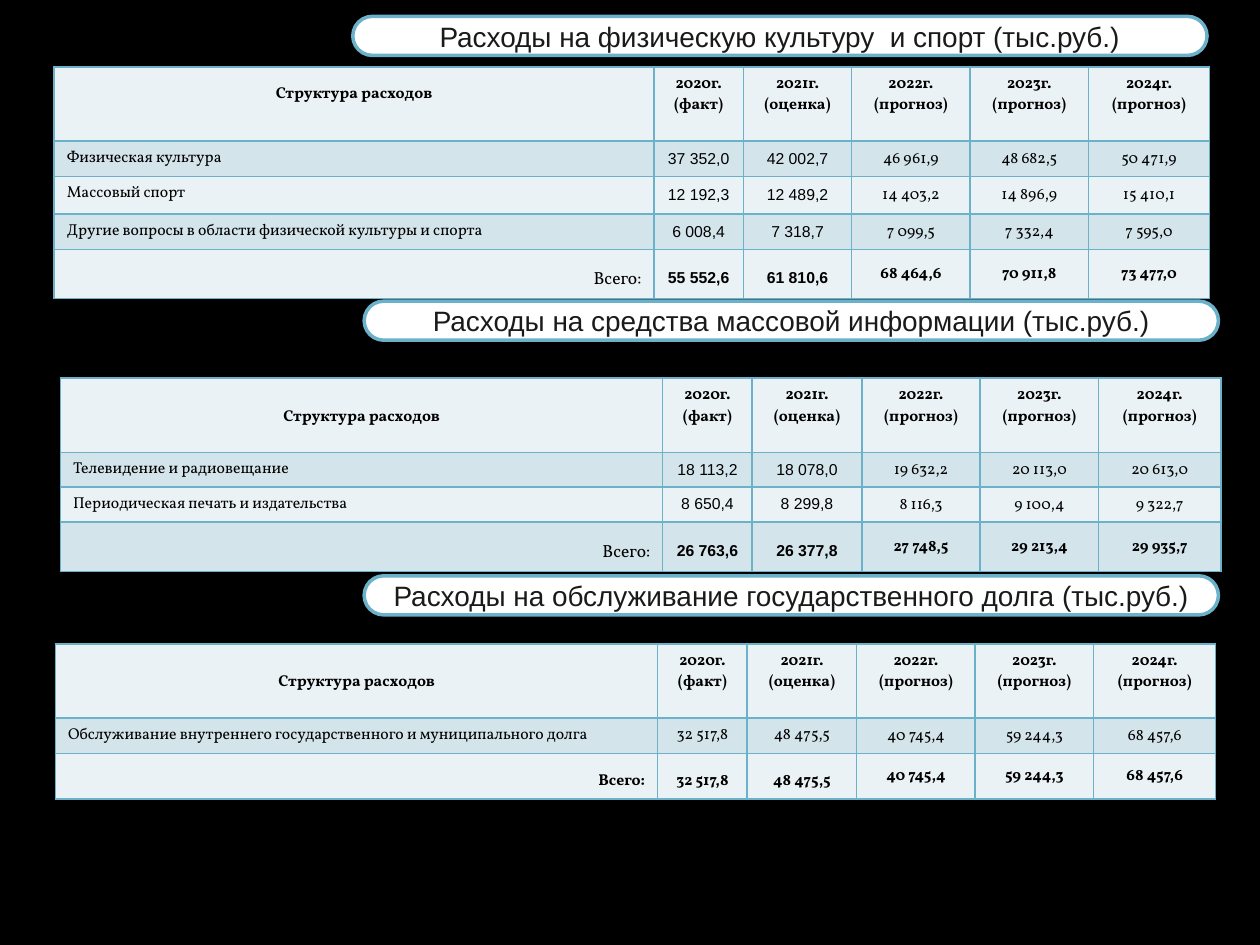
from lxml import etree
from pptx import Presentation
from pptx.dml.color import RGBColor
from pptx.enum.shapes import MSO_SHAPE as Shape
from pptx.enum.text import MSO_ANCHOR as Anchor, PP_ALIGN as Align
from pptx.oxml.ns import qn
from pptx.util import Inches, Pt

BORDER, LIGHT, DARK = "6BB1C9", "EBF2F5", "D4E4EB"
SERIF, SANS = "Vollkorn", "Arial"
HEADER = ["Структура расходов", "2020г. (факт)", "2021г. (оценка)",
          "2022г. (прогноз)", "2023г. (прогноз)", "2024г. (прогноз)"]
FIRST_FORECAST = 3  # column index
TOTAL = "Всего:"
WIDE_COLUMNS = [4.78, 0.71, 0.87, 0.94, 0.94, 0.97]

SECTIONS = [
    {
        "title": "Расходы на физическую культуру  и спорт (тыс.руб.)",
        "title_at": (2.8, 0.13),
        "table_at": (0.43, 0.53),
        "columns": [4.76, 0.71, 0.86, 0.94, 0.94, 0.96],
        "heights": [0.59, 0.28, 0.3, 0.28, 0.39],
        "header_spacing": 1.5,
        "actual_font": SANS,
        "strong_total": False,
        "rows": [
            ["Физическая культура", "37 352,0", "42 002,7", "46 961,9", "48 682,5", "50 471,9"],
            ["Массовый спорт", "12 192,3", "12 489,2", "14 403,2", "14 896,9", "15 410,1"],
            ["Другие вопросы в области физической культуры и спорта",
             "6 008,4", "7 318,7", "7 099,5", "7 332,4", "7 595,0"],
            [TOTAL, "55 552,6", "61 810,6", "68 464,6", "70 911,8", "73 477,0"],
        ],
    },
    {
        "title": "Расходы на средства массовой информации (тыс.руб.)",
        "title_at": (2.89, 2.39),
        "table_at": (0.48, 3),
        "columns": WIDE_COLUMNS,
        "heights": [0.59, 0.27, 0.28, 0.39],
        "header_spacing": 2,
        "actual_font": SANS,
        "strong_total": False,
        "rows": [
            ["Телевидение и радиовещание",
             "18 113,2", "18 078,0", "19 632,2", "20 113,0", "20 613,0"],
            ["Периодическая печать и издательства",
             "8 650,4", "8 299,8", "8 116,3", "9 100,4", "9 322,7"],
            [TOTAL, "26 763,6", "26 377,8", "27 748,5", "29 213,4", "29 935,7"],
        ],
    },
    {
        "title": "Расходы на обслуживание государственного долга (тыс.руб.)",
        "title_at": (2.89, 4.57),
        "table_at": (0.44, 5.11),
        "columns": WIDE_COLUMNS,
        "heights": [0.59, 0.28, 0.36],
        "header_spacing": 2,
        "actual_font": SERIF,
        "strong_total": True,
        "rows": [
            ["Обслуживание внутреннего государственного и муниципального долга",
             "32 517,8", "48 475,5", "40 745,4", "59 244,3", "68 457,6"],
            [TOTAL, "32 517,8", "48 475,5", "40 745,4", "59 244,3", "68 457,6"],
        ],
    },
]


def paint(color_owner, color):
    """Make a fill solid, or colour a font or line."""
    if hasattr(color_owner, "solid"):
        color_owner.solid()
        color_owner.fore_color.rgb = RGBColor.from_string(color)
    else:
        color_owner.color.rgb = RGBColor.from_string(color)


def write(paragraph, text, align, font_name, size, color="000000", bold=False, spacing=None):
    paragraph.text = text
    paragraph.alignment = align
    paragraph.line_spacing = spacing
    font = paragraph.font
    font.name, font.size, font.bold = font_name, Pt(size), bold
    paint(font, color)


def add_borders(cell):
    properties = cell._tc.get_or_add_tcPr()
    for index, side in enumerate(("lnL", "lnR", "lnT", "lnB")):
        line = etree.Element(qn(f"a:{side}"), w=str(Pt(1)))
        fill = etree.SubElement(line, qn("a:solidFill"))
        etree.SubElement(fill, qn("a:srgbClr"), val=BORDER)
        properties.insert(index, line)


def add_title(slide, section):
    left, top = section["title_at"]
    pill = slide.shapes.add_shape(Shape.ROUNDED_RECTANGLE, Inches(left), Inches(top),
                                  Inches(6.78), Inches(0.31))
    pill.adjustments[0] = 0.5
    pill.shadow.inherit = False
    paint(pill.fill, "FFFFFF")
    paint(pill.line, BORDER)
    pill.line.width = Pt(2)
    frame = pill.text_frame
    frame.word_wrap = True
    frame.vertical_anchor = Anchor.MIDDLE
    frame.margin_top = frame.margin_bottom = 0
    write(frame.paragraphs[0], section["title"], Align.CENTER, SANS, 16, "1A1A1B")


def fill_cell(cell, text, row, column, section):
    header = row == 0
    total = row == len(section["rows"])
    label = column == 0
    forecast = column >= FIRST_FORECAST
    strong = section["strong_total"]

    align, font_name, size, spacing = Align.CENTER, SERIF, 9, None
    bold = header or (total and (strong or not label))
    if label:
        if header:
            spacing = section["header_spacing"]
        elif total:
            align = Align.RIGHT
            size = 9 if strong else 10
        else:
            align = Align.LEFT
    elif not header and not forecast:
        font_name = section["actual_font"]
    if total and not forecast:
        spacing = 1.5

    if not header and (not label or (total and strong)):
        cell.vertical_anchor = Anchor.MIDDLE
    if forecast and not header:
        cell.margin_left = cell.margin_right = cell.margin_top = Inches(0.01)
        cell.margin_bottom = 0
    write(cell.text_frame.paragraphs[0], text, align, font_name, size,
          bold=bold, spacing=spacing)
    paint(cell.fill, DARK if row % 2 else LIGHT)
    add_borders(cell)


def add_expense_table(slide, section):
    rows = [HEADER] + section["rows"]
    left, top = section["table_at"]
    columns, heights = section["columns"], section["heights"]
    table = slide.shapes.add_table(len(rows), len(columns), Inches(left), Inches(top),
                                   Inches(sum(columns)), Inches(sum(heights))).table
    for column, width in zip(table.columns, columns):
        column.width = Inches(width)
    for row, height in zip(table.rows, heights):
        row.height = Inches(height)
    for row_index, values in enumerate(rows):
        for column_index, text in enumerate(values):
            fill_cell(table.cell(row_index, column_index), text,
                      row_index, column_index, section)


def main():
    presentation = Presentation()
    presentation.slide_width, presentation.slide_height = Inches(10), Inches(7.5)
    slide = presentation.slides.add_slide(presentation.slide_layouts[6])
    paint(slide.background.fill, "000000")
    for section in SECTIONS:
        add_title(slide, section)
        add_expense_table(slide, section)
    presentation.save("out.pptx")


if __name__ == "__main__":
    main()
